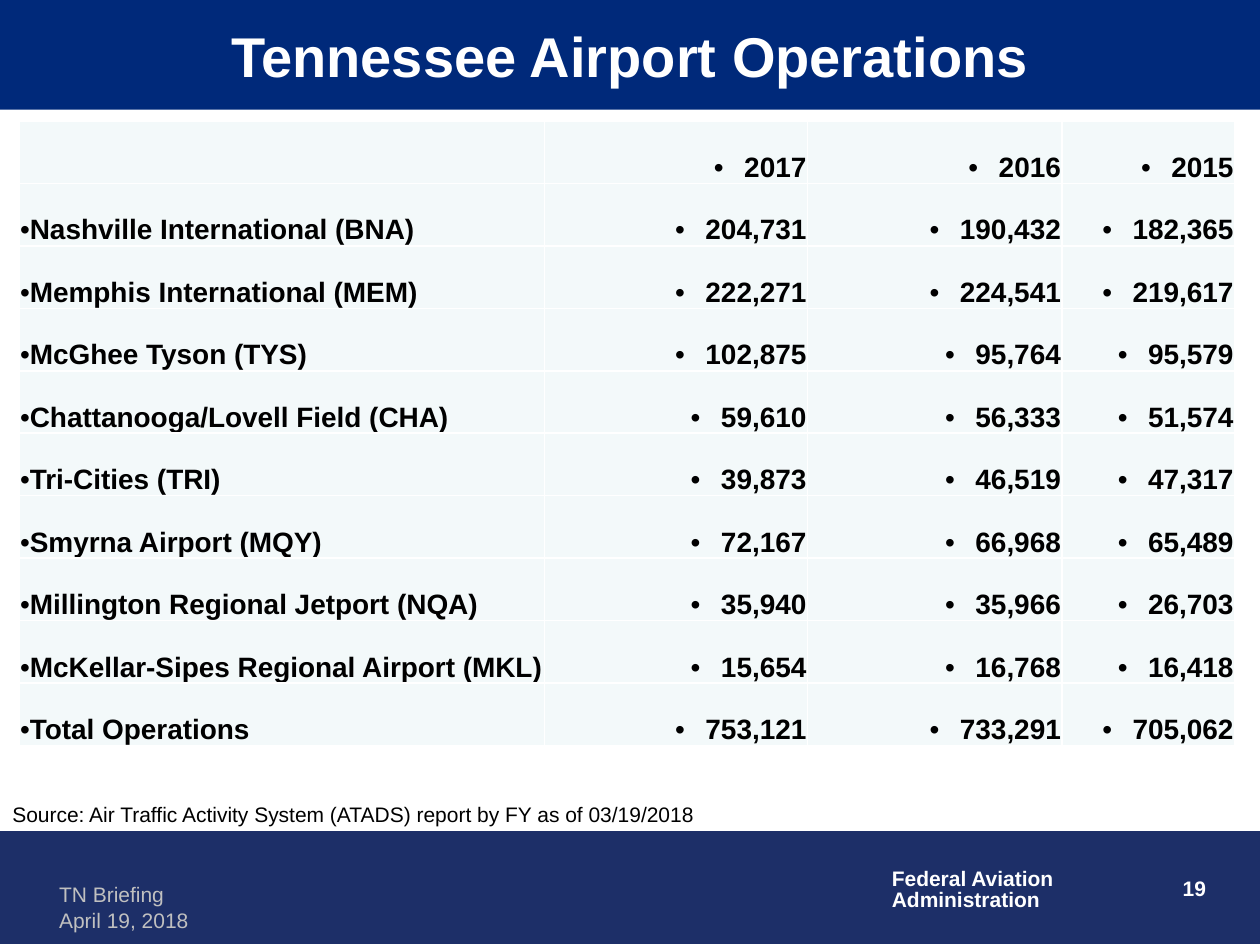
import pptx
import pptx.dml.color
import pptx.enum.shapes
import pptx.enum.text
import pptx.oxml.ns
import pptx.util
from lxml import etree

Inches = pptx.util.Inches
Pt = pptx.util.Pt
ALIGN = pptx.enum.text.PP_ALIGN
ANCHOR = pptx.enum.text.MSO_ANCHOR
qn = pptx.oxml.ns.qn

TITLE = "Tennessee Airport Operations"
SOURCE = "Source: Air Traffic Activity System (ATADS) report by FY as of 03/19/2018"
BRIEFING = ["TN Briefing", "April 19, 2018"]
AGENCY = ["Federal Aviation", "Administration"]
PAGE_NUMBER = "19"

OPERATIONS = [
    ("", "2017", "2016", "2015"),
    ("Nashville International (BNA)", "204,731", "190,432", "182,365"),
    ("Memphis International (MEM)", "222,271", "224,541", "219,617"),
    ("McGhee Tyson (TYS)", "102,875", "95,764", "95,579"),
    ("Chattanooga/Lovell Field (CHA)", "59,610", "56,333", "51,574"),
    ("Tri-Cities (TRI)", "39,873", "46,519", "47,317"),
    ("Smyrna Airport (MQY)", "72,167", "66,968", "65,489"),
    ("Millington Regional Jetport (NQA)", "35,940", "35,966", "26,703"),
    ("McKellar-Sipes Regional Airport (MKL)", "15,654", "16,768", "16,418"),
    ("Total Operations", "753,121", "733,291", "705,062"),
]
COLUMN_WIDTHS = [4.17, 2.09, 2.02, 1.37]
TABLE_LEFT, TABLE_TOP, TABLE_HEIGHT = 0.15, 0.96, 4.96
NUMBER_INDENT = 0.24

WHITE, BLACK, GREY = "FFFFFF", "000000", "C0C0C0"
TITLE_BLUE, FOOTER_BLUE, CELL_TINT = "00297A", "1D2F68", "F3F9FA"


def paint(color_format, color):
    color_format.rgb = pptx.dml.color.RGBColor.from_string(color)


def fill_solid(target, color):
    target.fill.solid()
    paint(target.fill.fore_color, color)


def add_run(paragraph, text, size, color, bold=False):
    run = paragraph.add_run()
    run.text = text
    run.font.name = "Arial"
    run.font.size = Pt(size)
    run.font.bold = bold
    paint(run.font.color, color)


def add_text_box(slide, left, top, width, height, wrap=True):
    box = slide.shapes.add_textbox(
        Inches(left), Inches(top), Inches(width), Inches(height))
    box.text_frame.word_wrap = wrap
    return box.text_frame


def add_bullet(paragraph, indent):
    properties = paragraph._p.get_or_add_pPr()
    properties.set("marL", str(Inches(indent)))
    properties.set("indent", str(-Inches(indent)))
    etree.SubElement(properties, qn("a:buFont")).set("typeface", "Arial")
    etree.SubElement(properties, qn("a:buChar")).set("char", "•")


def add_borders(cell, color, width):
    """Draw all four sides; the lines must precede the fill in the XML."""
    properties = cell._tc.get_or_add_tcPr()
    for position, side in enumerate(("lnL", "lnR", "lnT", "lnB")):
        line = etree.Element(qn("a:" + side), w=str(Pt(width)))
        solid = etree.SubElement(line, qn("a:solidFill"))
        etree.SubElement(solid, qn("a:srgbClr")).set("val", color)
        properties.insert(position, line)


def add_footer(slide):
    band = slide.shapes.add_shape(
        pptx.enum.shapes.MSO_SHAPE.RECTANGLE,
        Inches(0), Inches(6.6), Inches(10), Inches(0.89))
    band.shadow.inherit = False
    fill_solid(band, FOOTER_BLUE)
    paint(band.line.color, FOOTER_BLUE)
    band.line.width = Pt(0.75)

    paragraph = add_text_box(slide, 7.59, 6.9, 2.08, 0.5).paragraphs[0]
    paragraph.alignment = ALIGN.RIGHT
    add_run(paragraph, PAGE_NUMBER, 12, WHITE, bold=True)

    frame = add_text_box(slide, 6.98, 6.85, 1.5, 0.44, wrap=False)
    for index, text in enumerate(AGENCY):
        paragraph = frame.add_paragraph() if index else frame.paragraphs[0]
        paragraph.line_spacing = 0.85
        add_run(paragraph, text, 12, WHITE, bold=True)

    paragraph = add_text_box(slide, 0.37, 6.95, 4.09, 0.5).paragraphs[0]
    for index, text in enumerate(BRIEFING):
        if index:
            paragraph.add_line_break()
        add_run(paragraph, text, 12, GREY)


def add_title(slide):
    title = slide.shapes.title
    title.left, title.top = Inches(0), Inches(0)
    title.width, title.height = Inches(10), Inches(0.87)
    fill_solid(title, TITLE_BLUE)
    title.text_frame.vertical_anchor = ANCHOR.MIDDLE
    paragraph = title.text_frame.paragraphs[0]
    paragraph.alignment = ALIGN.CENTER
    add_run(paragraph, TITLE, 32, WHITE, bold=True)


def add_operations_table(slide):
    table = slide.shapes.add_table(
        len(OPERATIONS), len(COLUMN_WIDTHS), Inches(TABLE_LEFT), Inches(TABLE_TOP),
        Inches(sum(COLUMN_WIDTHS)), Inches(TABLE_HEIGHT)).table
    for column, width in zip(table.columns, COLUMN_WIDTHS):
        column.width = Inches(width)
    for row_index, values in enumerate(OPERATIONS):
        for column_index, text in enumerate(values):
            cell = table.cell(row_index, column_index)
            fill_solid(cell, CELL_TINT)
            add_borders(cell, WHITE, 1)
            cell.vertical_anchor = ANCHOR.BOTTOM
            cell.margin_left = cell.margin_right = cell.margin_top = Inches(0.01)
            cell.margin_bottom = 0
            if not text:
                continue
            paragraph = cell.text_frame.paragraphs[0]
            is_number = column_index > 0
            paragraph.alignment = ALIGN.RIGHT if is_number else ALIGN.LEFT
            add_bullet(paragraph, NUMBER_INDENT if is_number else 0)
            add_run(paragraph, text, 16, BLACK, bold=True)


def main():
    presentation = pptx.Presentation()
    presentation.slide_width = Inches(10)
    presentation.slide_height = Inches(7.5)
    slide = presentation.slides.add_slide(presentation.slide_layouts[5])
    add_footer(slide)
    add_title(slide)
    source = add_text_box(slide, 0, 6.31, 5.67, 0.3)
    add_run(source.paragraphs[0], SOURCE, 12, BLACK)
    add_operations_table(slide)
    presentation.save("out.pptx")


if __name__ == "__main__":
    main()
